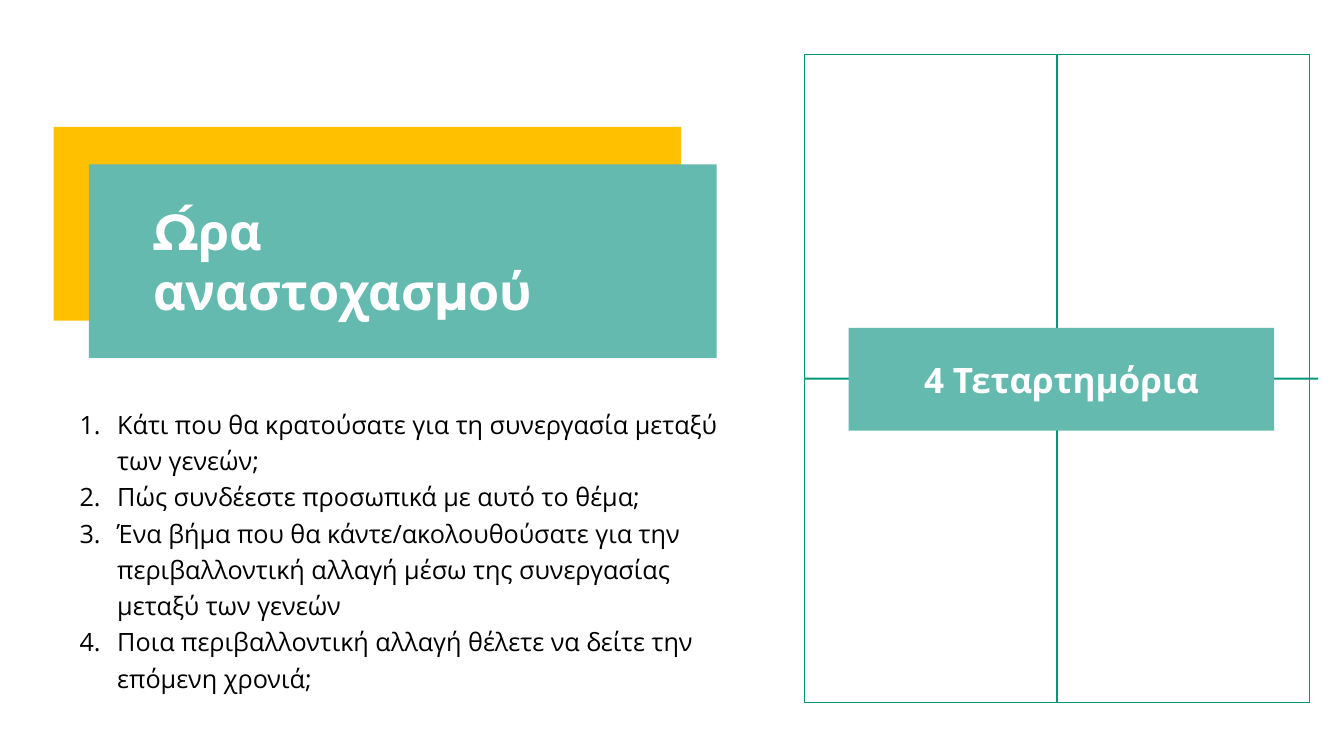
"""Build the reflection slide with four questions and a four-quadrant frame."""
from lxml.etree import SubElement
from pptx import Presentation
from pptx.dml.color import RGBColor
from pptx.enum.shapes import MSO_CONNECTOR as Connector, MSO_SHAPE as Shape
from pptx.enum.text import MSO_ANCHOR as Anchor, MSO_AUTO_SIZE as AutoSize, PP_ALIGN as Align
from pptx.oxml.ns import qn
from pptx.util import Cm, Pt

TITLE = "Ώρα αναστοχασμού"
QUESTIONS = [
    "Κάτι που θα κρατούσατε για τη συνεργασία μεταξύ των γενεών;",
    "Πώς συνδέεστε προσωπικά με αυτό το θέμα;",
    "Ένα βήμα που θα κάντε/ακολουθούσατε για την περιβαλλοντική αλλαγή "
    "μέσω της συνεργασίας μεταξύ των γενεών",
    "Ποια περιβαλλοντική αλλαγή θέλετε να δείτε την επόμενη χρονιά;",
]
QUADRANTS = "4 Τεταρτημόρια"

YELLOW, TEAL, GREEN, WHITE, BLACK = "FFC000", "65BAAF", "029777", "FFFFFF", "000000"
BANNER_SIZE = (15.82, 4.88)
BANNERS = [(YELLOW, 1.35, 3.2), (TEAL, 2.24, 4.14)]
TITLE_AREA = (3.61, 4.9, 11.58, 3.33)
LIST_AREA = (1.75, 10.03, 17.63, 7.57)
FRAME_AREA = (20.27, 1.37, 12.73, 16.34)
LABEL_AREA = (21.39, 8.26, 10.72, 2.59)
AXIS_END = 33.22
INDENT = Cm(0.95)


def color(value):
    return RGBColor.from_string(value)


def add_box(page, area, fill, line=None):
    box = page.shapes.add_shape(Shape.RECTANGLE, *map(Cm, area))
    box.shadow.inherit = False
    box.fill.solid()
    box.fill.fore_color.rgb = color(fill)
    if line:
        box.line.color.rgb = color(line)
        box.line.width = Pt(1)
    else:
        box.line.fill.background()
    return box


def add_axis(page, start, end):
    axis = page.shapes.add_connector(Connector.STRAIGHT, *map(Cm, start + end))
    axis.line.color.rgb = color(GREEN)
    axis.line.width = Pt(1.5)
    SubElement(axis.element.spPr, qn("a:effectLst"))
    return axis


def write(box, lines, font, size, ink, bold=False, align=Align.LEFT,
          anchor=Anchor.MIDDLE, spacing=1.0, numbered=False):
    frame = box.text_frame
    frame.word_wrap = True
    frame.auto_size = AutoSize.NONE
    frame.vertical_anchor = anchor
    for index, line in enumerate(lines):
        para = frame.add_paragraph() if index else frame.paragraphs[0]
        para.alignment = align
        para.line_spacing = spacing
        para.space_before = Pt(0)
        span = para.add_run()
        span.text = line
        span.font.name = font
        span.font.size = Pt(size)
        span.font.bold = bold
        span.font.color.rgb = color(ink)
        if numbered:
            props = para._p.get_or_add_pPr()
            props.set("marL", str(INDENT))
            props.set("indent", str(-INDENT))
            SubElement(props, qn("a:buFont"), typeface="+mj-lt")
            SubElement(props, qn("a:buAutoNum"), type="arabicPeriod")


def place(box, area):
    box.left, box.top, box.width, box.height = map(Cm, area)
    tree = box.element.getparent()
    tree.append(box.element)


def main():
    deck = Presentation()
    deck.slide_width, deck.slide_height = Cm(33.87), Cm(19.05)
    page = deck.slides.add_slide(deck.slide_layouts[1])
    title, body = page.placeholders

    for fill, left, top in BANNERS:
        add_box(page, (left, top, *BANNER_SIZE), fill)

    place(title, TITLE_AREA)
    write(title, [TITLE], "Montserrat", 36, WHITE, bold=True)
    place(body, LIST_AREA)
    write(body, QUESTIONS, "Open Sans", 18, BLACK, anchor=Anchor.TOP,
          spacing=1.2, numbered=True)

    left, top, width, height = FRAME_AREA
    middle_x, middle_y = left + width / 2, top + height / 2
    frame = add_box(page, FRAME_AREA, WHITE, GREEN)
    vertical = add_axis(page, (middle_x, top), (middle_x, top + height))
    vertical.begin_connect(frame, 0)
    vertical.end_connect(frame, 2)
    horizontal = add_axis(page, (left, middle_y), (AXIS_END, middle_y))
    horizontal.begin_connect(frame, 1)

    label = add_box(page, LABEL_AREA, TEAL)
    write(label, [QUADRANTS], "Open Sans", 25, WHITE, bold=True, align=Align.CENTER)

    deck.save("out.pptx")


if __name__ == "__main__":
    main()
